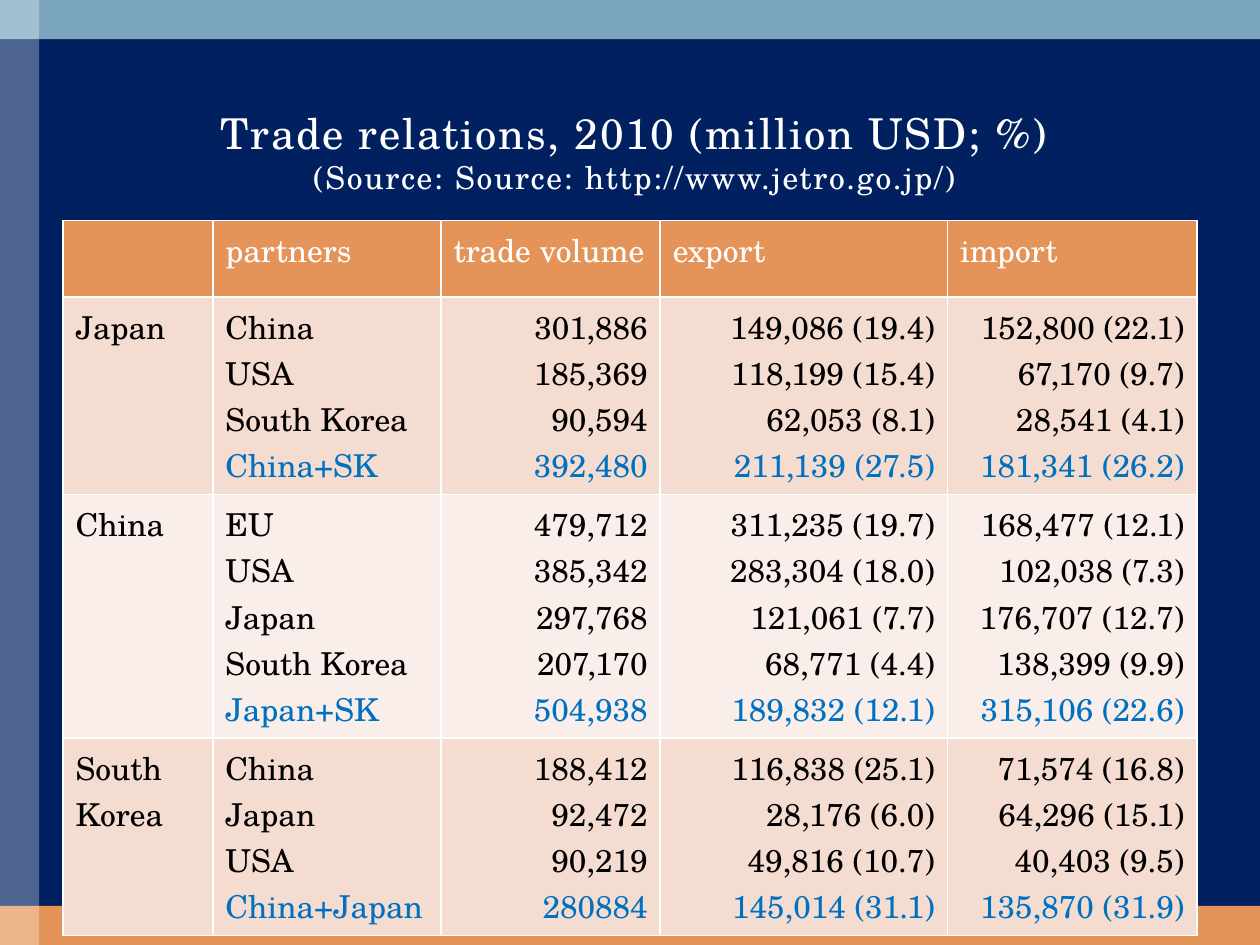
from dataclasses import dataclass
from typing import NamedTuple, Optional

from pptx import Presentation
from pptx.dml.color import RGBColor as Color
from pptx.enum.shapes import MSO_SHAPE as Preset
from pptx.enum.text import MSO_ANCHOR as Anchor, PP_ALIGN as Align
from pptx.oxml.ns import qn
from pptx.util import Cm, Pt
from lxml.etree import SubElement


@dataclass(frozen=True)
class Theme:
    font: str = "TeX Gyre Schola"
    title_size: float = 24.3
    body_size: float = 18
    page: str = "002060"
    accent: str = "E49458"
    top_band: str = "7BA5BE"
    white: str = "FFFFFF"
    text: str = "000000"
    total: str = "0070C0"
    rows: tuple = ("F5DCD1", "FAEEEA")
    line: float = 1


THEME = Theme()


class Band(NamedTuple):
    left: float
    top: float
    width: float
    height: float
    color: str
    opacity: Optional[int] = None


class Trade(NamedTuple):
    partner: str
    volume: str
    export: str
    imports: str


class Country(NamedTuple):
    name: str
    trades: list[Trade]  # the last entry is the regional total


BANDS = [
    Band(0, 18.26, 25.4, 0.79, THEME.accent),
    Band(0, 0, 25.4, 0.79, THEME.top_band),
    Band(0, 0, 0.79, 19.05, THEME.white, 30),
]
HEADERS = ["", "partners", "trade volume", "export", "import"]
WIDTHS = [3.02, 4.6, 4.42, 5.79, 5.03]
HEADER_HEIGHT = 1.54
LINE_HEIGHT = 0.93
ROW_PADDING = 0.26
COUNTRIES = [
    Country("Japan", [
        Trade("China", "301,886", "149,086 (19.4)", "152,800 (22.1)"),
        Trade("USA", "185,369", "118,199 (15.4)", "67,170 (9.7)"),
        Trade("South Korea", "90,594", "62,053 (8.1)", "28,541 (4.1)"),
        Trade("China+SK", "392,480", "211,139 (27.5)", "181,341 (26.2)"),
    ]),
    Country("China", [
        Trade("EU", "479,712", "311,235 (19.7)", "168,477 (12.1)"),
        Trade("USA", "385,342", "283,304 (18.0)", "102,038 (7.3)"),
        Trade("Japan", "297,768", "121,061 (7.7)", "176,707 (12.7)"),
        Trade("South Korea", "207,170", "68,771 (4.4)", "138,399 (9.9)"),
        Trade("Japan+SK", "504,938", "189,832 (12.1)", "315,106 (22.6)"),
    ]),
    Country("South Korea", [
        Trade("China", "188,412", "116,838 (25.1)", "71,574 (16.8)"),
        Trade("Japan", "92,472", "28,176 (6.0)", "64,296 (15.1)"),
        Trade("USA", "90,219", "49,816 (10.7)", "40,403 (9.5)"),
        Trade("China+Japan", "280884", "145,014 (31.1)", "135,870 (31.9)"),
    ]),
]


def set_all(target, values: dict) -> None:
    for name, value in values.items():
        setattr(target, name, value)


def add_span(para, text: str, color: str, size: float = THEME.body_size):
    span = para.add_run()
    span.text = text
    set_all(span.font, {"name": THEME.font, "size": Pt(size), "bold": False})
    span.font.color.rgb = Color.from_string(color)
    return span


def add_band(page, band: Band) -> None:
    box = page.shapes.add_shape(
        Preset.RECTANGLE, *(Cm(length) for length in band[:4]))
    box.shadow.inherit = False
    box.line.fill.background()
    box.fill.solid()
    box.fill.fore_color.rgb = Color.from_string(band.color)
    if band.opacity is not None:
        tint = box.fill._xPr.find(qn("a:solidFill"))[0]
        SubElement(tint, qn("a:alpha"), val=str(band.opacity * 1000))


def add_title(page, title: str, source: str) -> None:
    box = page.shapes.add_textbox(Cm(1.47), Cm(1.47), Cm(22.66), Cm(2.11))
    set_all(box.text_frame, {"word_wrap": True, "margin_top": Cm(0.68),
                             "vertical_anchor": Anchor.TOP})
    para = box.text_frame.paragraphs[0]
    para.alignment = Align.CENTER
    spans = [add_span(para, title, THEME.white, THEME.title_size)]
    para.add_line_break()
    spans.append(add_span(para, source, THEME.white))
    for span in spans:
        span.font._element.set("spc", "100")


def style_cell(cell, fill: str) -> None:
    """Fill the cell and rule its four edges in white."""
    properties = cell._tc.get_or_add_tcPr()
    for edge in "LRTB":
        rule = SubElement(properties, qn(f"a:ln{edge}"), w=str(Pt(THEME.line)))
        paint = SubElement(rule, qn("a:solidFill"))
        SubElement(paint, qn("a:srgbClr"), val=THEME.white)
    cell.fill.solid()
    cell.fill.fore_color.rgb = Color.from_string(fill)


def fill_column(cell, lines: tuple, align: Align) -> None:
    """Write one paragraph per trade, with the closing total highlighted."""
    frame = cell.text_frame
    for index, line in enumerate(lines):
        para = frame.add_paragraph() if index else frame.paragraphs[0]
        para.alignment = align
        is_total = index == len(lines) - 1
        add_span(para, line, THEME.total if is_total else THEME.text)


def add_trade_table(page) -> None:
    heights = [HEADER_HEIGHT]
    heights += [len(country.trades) * LINE_HEIGHT + ROW_PADDING
                for country in COUNTRIES]
    table = page.shapes.add_table(
        len(heights), len(WIDTHS), Cm(1.27), Cm(4.45),
        Cm(sum(WIDTHS)), Cm(sum(heights))).table
    for column, width in zip(table.columns, WIDTHS):
        column.width = Cm(width)
    for row, height in zip(table.rows, heights):
        row.height = Cm(height)

    for index, header in enumerate(HEADERS):
        cell = table.cell(0, index)
        style_cell(cell, THEME.accent)
        if header:
            add_span(cell.text_frame.paragraphs[0], header, THEME.white)

    for row, country in enumerate(COUNTRIES, start=1):
        for cell in table.rows[row].cells:
            style_cell(cell, THEME.rows[(row - 1) % 2])
        name_cell = table.cell(row, 0)
        add_span(name_cell.text_frame.paragraphs[0], country.name, THEME.text)
        for column, lines in enumerate(zip(*country.trades), start=1):
            align = Align.LEFT if column == 1 else Align.RIGHT
            fill_column(table.cell(row, column), lines, align)


def main() -> None:
    deck = Presentation()
    set_all(deck, {"slide_width": Cm(25.4), "slide_height": Cm(19.05)})
    page = deck.slides.add_slide(deck.slide_layouts[6])
    page.background.fill.solid()
    page.background.fill.fore_color.rgb = Color.from_string(THEME.page)
    for band in BANDS:
        add_band(page, band)
    add_title(page, "Trade relations, 2010 (million USD; %)",
              "(Source: Source: http://www.jetro.go.jp/)")
    add_trade_table(page)
    deck.save("out.pptx")


if __name__ == "__main__":
    main()
